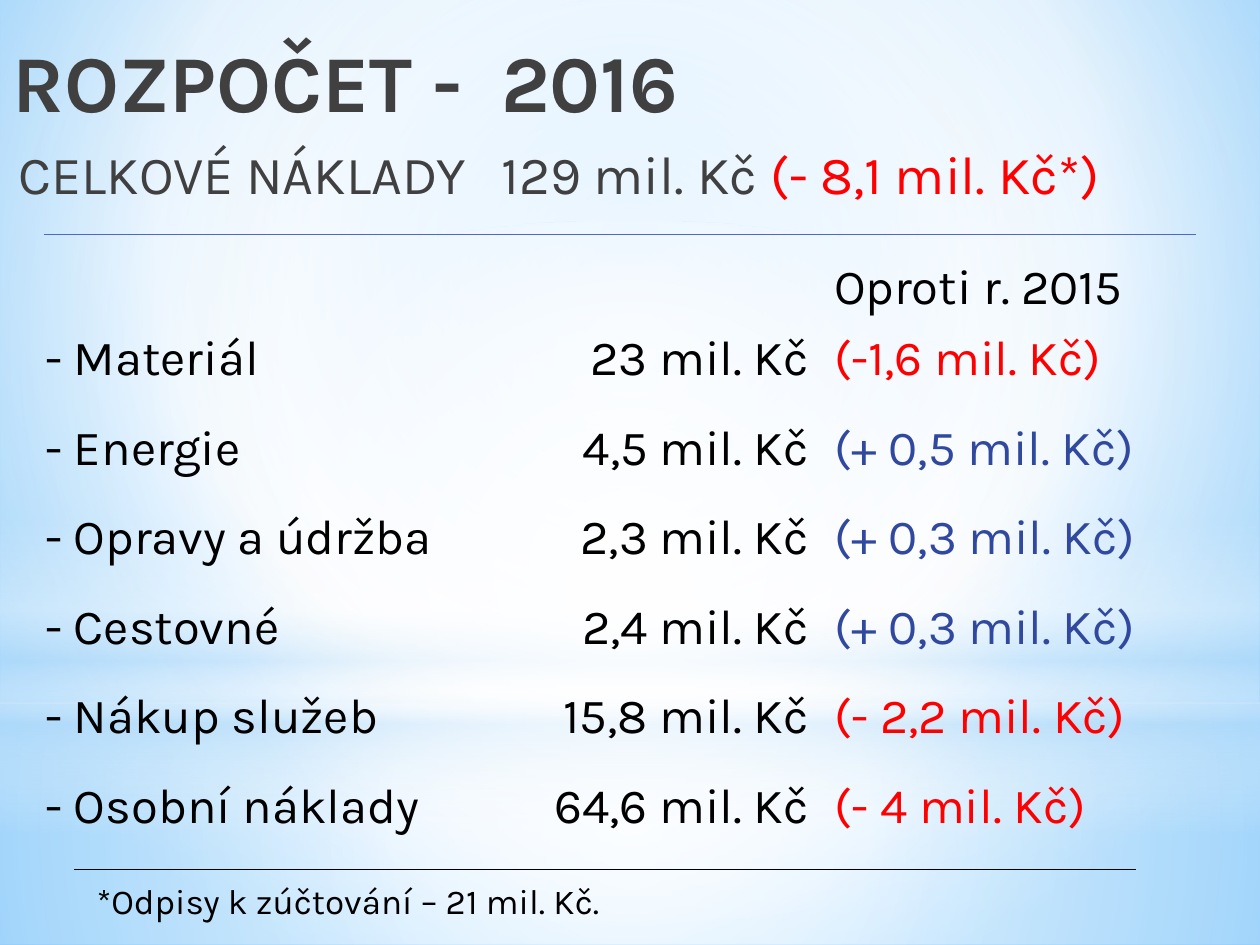
import pptx
import pptx.util
import pptx.dml.color
import pptx.enum.shapes
import pptx.enum.text
import pptx.oxml
import pptx.oxml.ns

Inches = pptx.util.Inches
Pt = pptx.util.Pt
qn = pptx.oxml.ns.qn
ALIGN = pptx.enum.text.PP_ALIGN
SHAPE = pptx.enum.shapes.MSO_SHAPE

COLORS = {
    "black": "000000", "gray": "404040", "red": "FF0000", "blue": "31489F",
    "rule": "4E67C8", "white": "FFFFFF", "sky": "B4DCFA",
    "sky_mid": "9ED5FF", "sky_deep": "5BB9FF",
}
FONT = "Karla"
NO_STYLE = "{2D5ABB26-0587-4C30-8999-92F81FD0307C}"
CENTER = (50, 50, 50, 50)
VALUE_STOP = 3.98
COSTS = [
    ("", "", "Oproti r. 2015", "black"),
    ("- Materiál", "23 mil. Kč", "(-1,6 mil. Kč)", "red"),
    ("- Energie", "4,5 mil. Kč", "(+ 0,5 mil. Kč)", "blue"),
    ("- Opravy a údržba", "2,3 mil. Kč", "(+ 0,3 mil. Kč)", "blue"),
    ("- Cestovné", "2,4 mil. Kč", "(+ 0,3 mil. Kč)", "blue"),
    ("- Nákup služeb", "15,8 mil. Kč", "(- 2,2 mil. Kč)", "red"),
    ("- Osobní náklady", "64,6 mil. Kč", "(- 4 mil. Kč)", "red"),
]


def rgb(name):
    return pptx.dml.color.RGBColor.from_string(COLORS[name])


def gradient(stops, center=None):
    stop_xml = "".join(
        f'<a:gs pos="{pos * 1000}"><a:srgbClr val="{COLORS[color]}">'
        f'<a:alpha val="{alpha * 1000}"/></a:srgbClr></a:gs>'
        for pos, color, alpha in stops)
    if center:
        left, top, right, bottom = (edge * 1000 for edge in center)
        course = (f'<a:path path="circle"><a:fillToRect l="{left}" t="{top}" '
                  f'r="{right}" b="{bottom}"/></a:path>')
    else:
        course = '<a:lin ang="5400000" scaled="0"/>'
    return pptx.oxml.parse_xml(
        f'<a:gradFill {pptx.oxml.ns.nsdecls("a")} rotWithShape="1">'
        f'<a:gsLst>{stop_xml}</a:gsLst>{course}</a:gradFill>')


def set_gradient(fill, properties, stops, center=None):
    fill.solid()
    solid = properties().find(qn("a:solidFill"))
    solid.getparent().replace(solid, gradient(stops, center))


def add_glow(slide, kind, top, height, stops, center=None):
    glow = slide.shapes.add_shape(kind, 0, Inches(top), Inches(10), Inches(height))
    glow.shadow.inherit = False
    glow.line.fill.background()
    set_gradient(glow.fill, lambda: glow._element.spPr, stops, center)


def add_backdrop(slide):
    set_gradient(slide.background.fill,
                 lambda: slide._element.find(".//" + qn("p:bgPr")),
                 [(0, "sky_mid", 100), (60, "white", 100), (100, "sky_deep", 100)],
                 (20, 10, 20, 60))
    add_glow(slide, SHAPE.RECTANGLE, 5.58, 1.92,
             [(0, "white", 91), (37, "white", 76), (100, "sky", 79)], CENTER)
    add_glow(slide, SHAPE.RECTANGLE, 0, 5.58,
             [(0, "white", 89), (48, "white", 62), (100, "sky", 79)], CENTER)
    add_glow(slide, SHAPE.RECTANGLE, 4.12, 2.5,
             [(0, "white", 0), (29, "white", 30), (45, "sky", 40),
              (55, "white", 26), (65, "sky", 60), (100, "white", 0)])
    add_glow(slide, SHAPE.OVAL, 1.75, 5.58,
             [(0, "white", 100), (56, "white", 0)], CENTER)


def write(paragraph, text, size=28, color="black", bold=False, align=ALIGN.LEFT):
    paragraph.alignment = align
    run = paragraph.add_run()
    run.text = text
    run.font.name = FONT
    run.font.size = Pt(size)
    run.font.bold = bold
    run.font.color.rgb = rgb(color)


def add_text_line(slide, left, top, width, height, inset=0.1, middle=False):
    frame = slide.shapes.add_textbox(
        Inches(left), Inches(top), Inches(width), Inches(height)).text_frame
    frame.word_wrap = True
    frame.margin_left = Inches(inset)
    if middle:
        frame.vertical_anchor = pptx.enum.text.MSO_ANCHOR.MIDDLE
    return frame.paragraphs[0]


def add_tab_stop(paragraph, position):
    paragraph._p.get_or_add_pPr().append(pptx.oxml.parse_xml(
        f'<a:tabLst {pptx.oxml.ns.nsdecls("a")}>'
        f'<a:tab pos="{Inches(position)}" algn="l"/></a:tabLst>'))


def add_rule(slide, start, end, y, color):
    rule = slide.shapes.add_connector(
        pptx.enum.shapes.MSO_CONNECTOR.STRAIGHT,
        Inches(start), Inches(y), Inches(end), Inches(y))
    rule.line.color.rgb = rgb(color)
    rule.line.width = Pt(0.75)
    rule._element.spPr.append(pptx.oxml.parse_xml(
        f'<a:effectLst {pptx.oxml.ns.nsdecls("a")}/>'))


def add_cost_table(slide):
    widths = [3.35, 2.91, 3.19]
    heights = [0.53] + [0.71] * 5 + [0.97]
    table = slide.shapes.add_table(
        len(COSTS), len(widths), Inches(0.26), Inches(2.01),
        Inches(sum(widths)), Inches(sum(heights))).table
    table.first_row = False
    table.horz_banding = False
    table._tbl.tblPr.find(qn("a:tableStyleId")).text = NO_STYLE
    for column, width in zip(table.columns, widths):
        column.width = Inches(width)
    for row, height, (item, amount, change, color) in zip(table.rows, heights, COSTS):
        row.height = Inches(height)
        entries = [(item, "black", ALIGN.LEFT), (amount, "black", ALIGN.RIGHT),
                   (change, color, ALIGN.LEFT)]
        for cell, (text, text_color, align) in zip(row.cells, entries):
            cell.fill.background()
            if text:
                write(cell.text_frame.paragraphs[0], text,
                      color=text_color, align=align)


def main():
    deck = pptx.Presentation()
    deck.slide_width = Inches(10)
    deck.slide_height = Inches(7.5)
    slide = deck.slides.add_slide(deck.slide_layouts[6])
    add_backdrop(slide)

    title = add_text_line(slide, 0, 0.13, 10, 1.02, middle=True)
    write(title, "ROZPOČET -\t2016", size=46, color="gray", bold=True)
    add_tab_stop(title, VALUE_STOP - 0.1)

    total = add_text_line(slide, 0, 1.07, 9.8, 0.79, inset=0.15)
    total.space_before = Pt(3)
    write(total, "CELKOVÉ NÁKLADY\t129 mil. Kč ", size=30.6, color="gray")
    write(total, "(- 8,1 mil. Kč*)", size=30.6, color="red")
    add_tab_stop(total, VALUE_STOP - 0.15)

    add_rule(slide, 0.35, 9.49, 1.86, "rule")
    add_rule(slide, 0.59, 9.02, 6.9, "black")
    footnote = add_text_line(slide, 0.67, 6.93, 8.11, 0.44)
    write(footnote, "*Odpisy k zúčtování – 21 mil. Kč.", size=20)
    add_cost_table(slide)
    deck.save("out.pptx")


if __name__ == "__main__":
    main()
